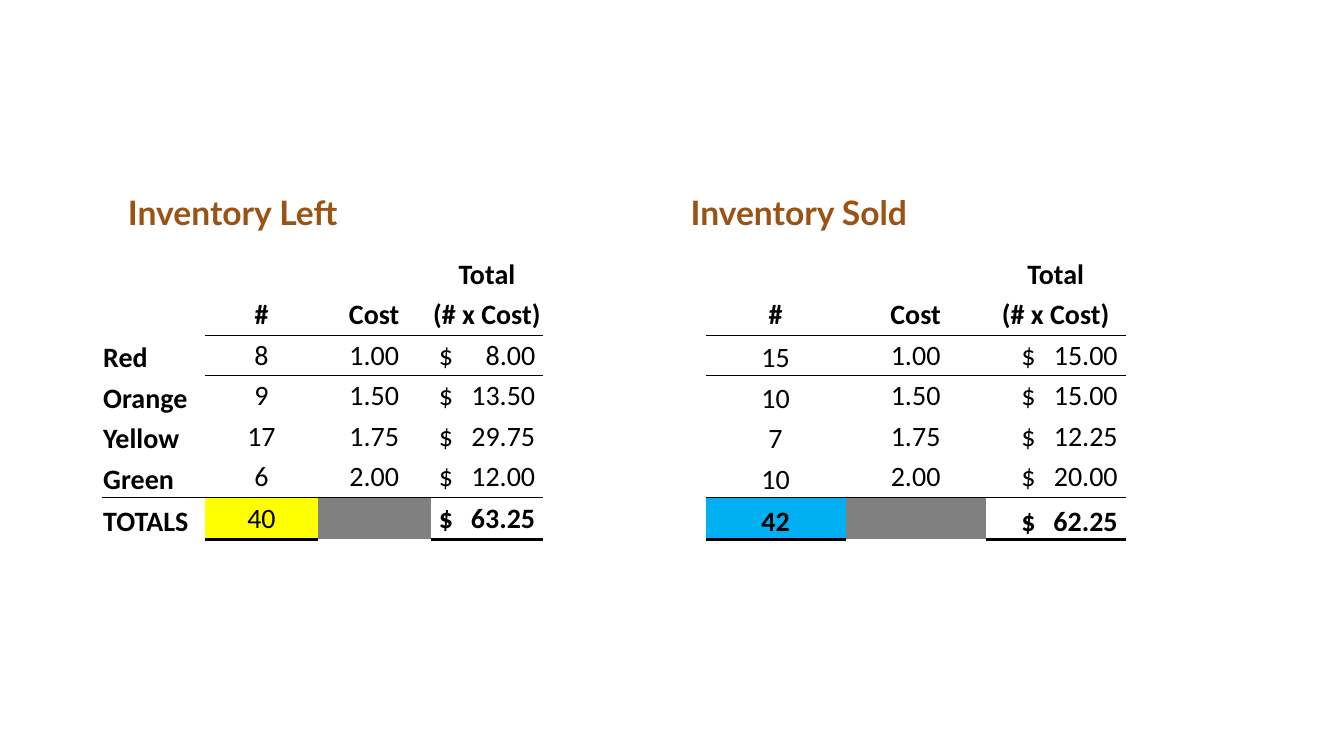
from lxml import etree
from pptx import Presentation
from pptx.dml.color import RGBColor
from pptx.enum.text import MSO_ANCHOR, PP_ALIGN
from pptx.oxml.ns import qn
from pptx.util import Cm, Pt

BLACK = RGBColor(0x00, 0x00, 0x00)
BROWN = RGBColor(0x9A, 0x53, 0x15)
GRAY = RGBColor(0x80, 0x80, 0x80)
YELLOW = RGBColor(0xFF, 0xFF, 0x00)
BLUE = RGBColor(0x00, 0xB0, 0xF0)

MIDDLE, BOTTOM = MSO_ANCHOR.MIDDLE, MSO_ANCHOR.BOTTOM
LEFT, CENTER = PP_ALIGN.LEFT, PP_ALIGN.CENTER

COMPARISON_LAYOUT = 4
PLAIN_TABLE_STYLE = "{2D5ABB26-0587-4C30-8999-92F81FD0307C}"
THIN, THICK = Pt(0.5), Pt(2)
MONEY_WIDTH = Cm(2.43)
MONEY_MARGIN = Cm(0.2)

LABELS = ["Red", "Orange", "Yellow", "Green"]
COSTS = [1.00, 1.50, 1.75, 2.00]
COUNTS_LEFT = [8, 9, 17, 6]
COUNTS_SOLD = [15, 10, 7, 10]


def add_heading(s, idx, text, left):
    sp = s.placeholders[idx]
    sp.left, sp.top, sp.width, sp.height = left, Cm(4.67), Cm(13.77), Cm(1.3)
    tf = sp.text_frame
    tf.vertical_anchor = BOTTOM
    r = tf.paragraphs[0].add_run()
    r.text = text
    r.font.name, r.font.size, r.font.bold = "Lato", Pt(24), True
    r.font.color.rgb = BROWN


def add_border(cell, side, width):
    """Draw a black line on one side; side is lnT or lnB."""
    tcPr = cell._tc.get_or_add_tcPr()
    ln = etree.Element(qn("a:" + side), w=str(width))
    fill = etree.SubElement(ln, qn("a:solidFill"))
    etree.SubElement(fill, qn("a:srgbClr"), val=str(BLACK))
    tcPr.insert(0, ln)


def add_right_tab(p, pos):
    tabs = etree.SubElement(p._p.get_or_add_pPr(), qn("a:tabLst"))
    etree.SubElement(tabs, qn("a:tab"), pos=str(pos), algn="r")


def write_cell(cell, text, bold, align, anchor):
    cell.margin_left = cell.margin_top = cell.margin_right = Cm(0.03)
    cell.margin_bottom = 0
    cell.vertical_anchor = anchor
    if not text:
        return
    p = cell.text_frame.paragraphs[0]
    p.alignment = align
    r = p.add_run()
    r.text = text
    r.font.name, r.font.size, r.font.bold = "Calibri", Pt(20), bold
    r.font.color.rgb = BLACK


def align_money(cell, col_width):
    """Keep the dollar sign left and the amount right in a fixed width."""
    cell.margin_left = col_width - MONEY_WIDTH - MONEY_MARGIN
    add_right_tab(cell.text_frame.paragraphs[0], MONEY_WIDTH)


def inventory_rows(counts):
    amounts = [n * cost for n, cost in zip(counts, COSTS)]
    rows = [["", "", "Total"], ["#", "Cost", "(# x Cost)"]]
    for n, cost, amount in zip(counts, COSTS, amounts):
        rows.append([str(n), f"{cost:.2f}", f"$\t{amount:.2f}"])
    rows.append([str(sum(counts)), "", f"$\t{sum(amounts):.2f}"])
    return rows


def add_inventory(s, left, widths, rows, total_fill, total_bold, total_anchor):
    last, money = len(rows) - 1, len(widths) - 1
    count, cost = money - 2, money - 1
    frame = s.shapes.add_table(len(rows), len(widths), left, Cm(6.4),
                               sum(widths), Cm(7.19))
    table = frame.table
    table.first_row = table.horz_banding = False
    for style in frame.element.iter(qn("a:tableStyleId")):
        style.text = PLAIN_TABLE_STYLE
    for col, width in zip(table.columns, widths):
        col.width = width
    for i, row in enumerate(table.rows):
        row.height = Cm(1.07) if i == last else Cm(1.02)

    for i, texts in enumerate(rows):
        for j, text in enumerate(texts):
            cell = table.cell(i, j)
            is_label = j < count
            bold = i < 2 or is_label or i == last
            if (i, j) == (last, count):
                bold = total_bold
            anchor = BOTTOM if j == 0 and i > 1 else MIDDLE
            if i == last and not is_label:
                anchor = total_anchor
            is_money = j == money and i > 1
            align = LEFT if is_label or is_money else CENTER
            write_cell(cell, text, bold, align, anchor)
            if is_money:
                align_money(cell, widths[j])

            if i == last and j in (count, money):
                add_border(cell, "lnB", THICK)
            elif i == last - 1 or (i == 1 and not is_label):
                add_border(cell, "lnB", THIN)
            if i == last or (i == 2 and not is_label):
                add_border(cell, "lnT", THIN)

    for j, color in ((count, total_fill), (cost, GRAY)):
        fill = table.cell(last, j).fill
        fill.solid()
        fill.fore_color.rgb = color


def main():
    prs = Presentation()
    prs.slide_width, prs.slide_height = Cm(33.87), Cm(19.05)
    s = prs.slides.add_slide(prs.slide_layouts[COMPARISON_LAYOUT])
    add_heading(s, 1, "Inventory Left", Cm(2.97))
    add_heading(s, 3, "Inventory Sold", Cm(17.15))
    for sp in list(s.placeholders):
        if not sp.text_frame.text:
            sp.element.getparent().remove(sp.element)

    add_inventory(s, Cm(17.78), [Cm(3.53)] * 3, inventory_rows(COUNTS_SOLD),
                  BLUE, True, BOTTOM)
    labels = ["", "", *LABELS, "TOTALS"]
    left_rows = [[label, *row] for label, row in
                 zip(labels, inventory_rows(COUNTS_LEFT))]
    add_inventory(s, Cm(2.57), [Cm(2.6)] + [Cm(2.84)] * 3, left_rows,
                  YELLOW, False, MIDDLE)
    prs.save("out.pptx")


if __name__ == "__main__":
    main()
